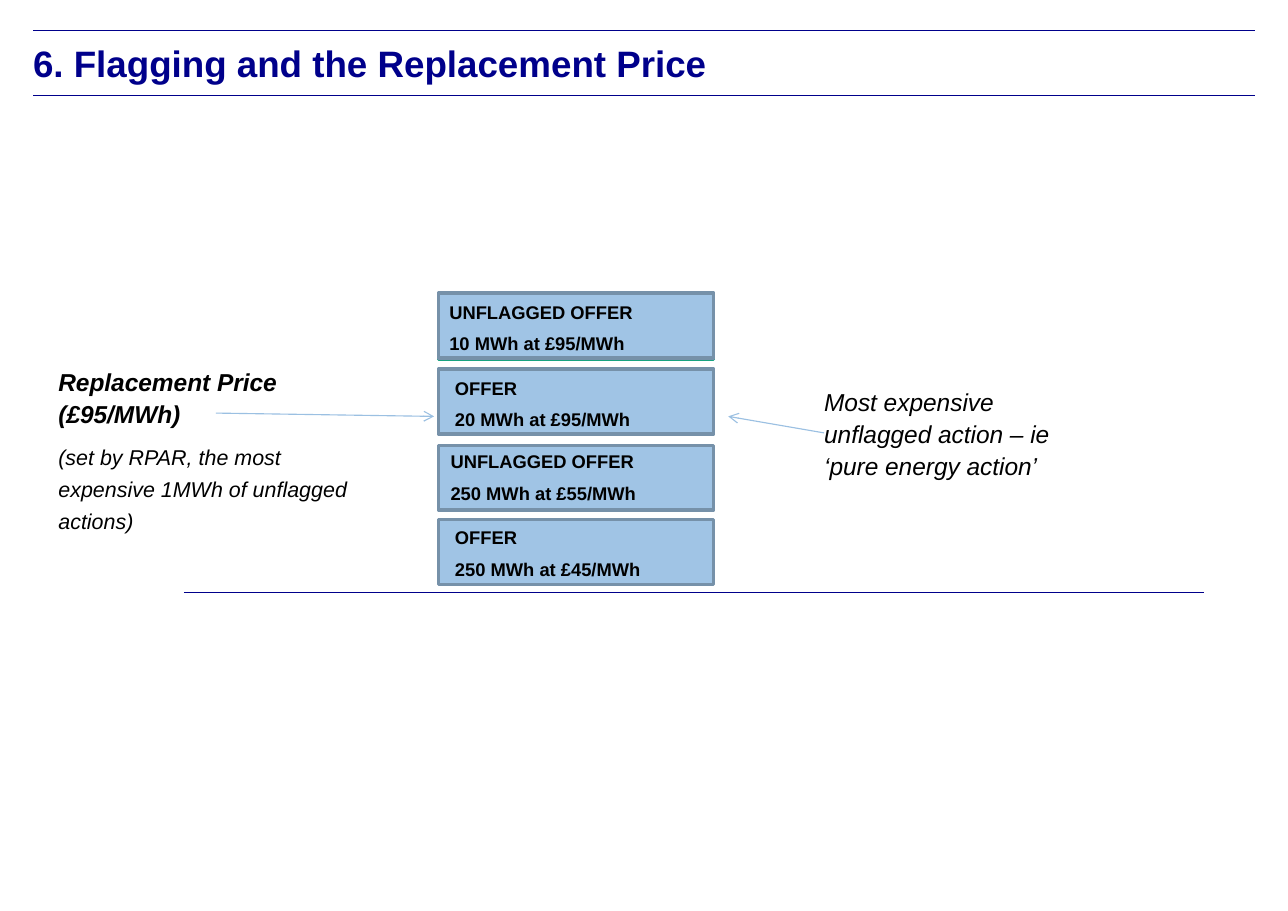
from lxml import etree
from pptx import Presentation
from pptx.dml.color import RGBColor
from pptx.enum.shapes import MSO_CONNECTOR, MSO_SHAPE
from pptx.enum.text import MSO_ANCHOR, PP_ALIGN
from pptx.oxml.ns import qn
from pptx.util import Pt

PX = 9144  # 100 px to the inch
NAVY = RGBColor(0x00, 0x00, 0x8B)
BLACK = RGBColor(0x00, 0x00, 0x00)
ARROW_BLUE = RGBColor(0x9B, 0xC0, 0xE2)
OFFER_FILL = RGBColor(0xA0, 0xC4, 0xE5)
OFFER_EDGE = RGBColor(0x76, 0x91, 0xA9)
MINT = RGBColor(0xD2, 0xF8, 0xEF)
TEAL = RGBColor(0x18, 0xA2, 0x80)
RECTANGLE = MSO_SHAPE.RECTANGLE
STRAIGHT = MSO_CONNECTOR.STRAIGHT
LEFT = PP_ALIGN.LEFT
TOP = MSO_ANCHOR.TOP

prs = Presentation()
prs.slide_width, prs.slide_height = 1169 * PX, 827 * PX
slide = prs.slides.add_slide(prs.slide_layouts[6])
shapes = slide.shapes


def write_text(shape, lines, size=12, color=BLACK, bold=False, italic=False,
               spacing=None, after=0, inset=(0, 0)):
    """Fill a shape with paragraphs; inset is its left and top margin in px."""
    frame = shape.text_frame
    frame.word_wrap = True
    frame.vertical_anchor = TOP
    frame.margin_left, frame.margin_top = (side * PX for side in inset)
    frame.margin_right = frame.margin_bottom = 0
    frame.text = "\n".join(lines)
    for paragraph in frame.paragraphs:
        paragraph.alignment = LEFT
        paragraph.space_after = Pt(after)
        if spacing:
            paragraph.line_spacing = Pt(spacing)
        font = paragraph.font
        font.name, font.size, font.color.rgb = "Arial", Pt(size), color
        font.bold, font.italic = bold, italic


def add_rule(x1, y1, x2, y2, color=NAVY, width=0.5, arrow=False):
    rule = shapes.add_connector(STRAIGHT, x1 * PX, y1 * PX, x2 * PX, y2 * PX)
    rule.line.color.rgb = color
    rule.line.width = Pt(width)
    if arrow:
        etree.SubElement(rule.line._get_or_add_ln(), qn("a:tailEnd"), type="arrow")
    etree.SubElement(rule._element.spPr, qn("a:effectLst"))


# Title between two rules
for y in (28, 87):
    add_rule(30, y, 1139, y)
title = shapes.add_textbox(30 * PX, 37 * PX, 1108 * PX, 50 * PX)
write_text(title, ["6. Flagging and the Replacement Price"], size=24, color=NAVY, bold=True)

# Explanations on both sides of the stack
unflagged_note = shapes.add_textbox(748 * PX, 349 * PX, 235 * PX, 88 * PX)
write_text(unflagged_note, ["Most expensive unflagged action – ie ‘pure energy action’"],
           size=16, italic=True, spacing=21, after=5.6)
replacement_note = shapes.add_textbox(53 * PX, 331 * PX, 285 * PX, 156 * PX)
write_text(replacement_note,
           ["Replacement Price (£95/MWh)",
            "(set by RPAR, the most expensive 1MWh of unflagged actions)"],
           size=16, italic=True, spacing=21, after=5.6)
price, price_basis = replacement_note.text_frame.paragraphs
price.font.bold = True
price_basis.font.size = Pt(14)

add_rule(748, 393, 661, 378, color=ARROW_BLUE, width=0.75, arrow=True)
add_rule(196, 375, 394, 378, color=ARROW_BLUE, width=0.75, arrow=True)
add_rule(167, 538, 1093, 538, width=1)

# Stack of offers; the top one has a teal backing one px lower
OFFERS = [
    (267, MINT, TEAL, [], (0, 0)),
    (266, OFFER_FILL, OFFER_EDGE, ["UNFLAGGED OFFER", "10 MWh at £95/MWh"], (10, 7)),
    (335, OFFER_FILL, OFFER_EDGE, ["OFFER", "20 MWh at £95/MWh"], (15, 7)),
    (404, OFFER_FILL, OFFER_EDGE, ["UNFLAGGED OFFER", "250 MWh at £55/MWh"], (11, 5)),
    (472, OFFER_FILL, OFFER_EDGE, ["OFFER", "250 MWh at £45/MWh"], (15, 6)),
]
for y, fill, edge, lines, inset in OFFERS:
    offer = shapes.add_shape(RECTANGLE, 398 * PX, y * PX, 250 * PX, 59 * PX)
    offer.shadow.inherit = False
    offer.fill.solid()
    offer.fill.fore_color.rgb = fill
    offer.line.color.rgb = edge
    offer.line.width = Pt(2)
    if lines:
        write_text(offer, lines, bold=True, after=6, inset=inset)

prs.save("out.pptx")
